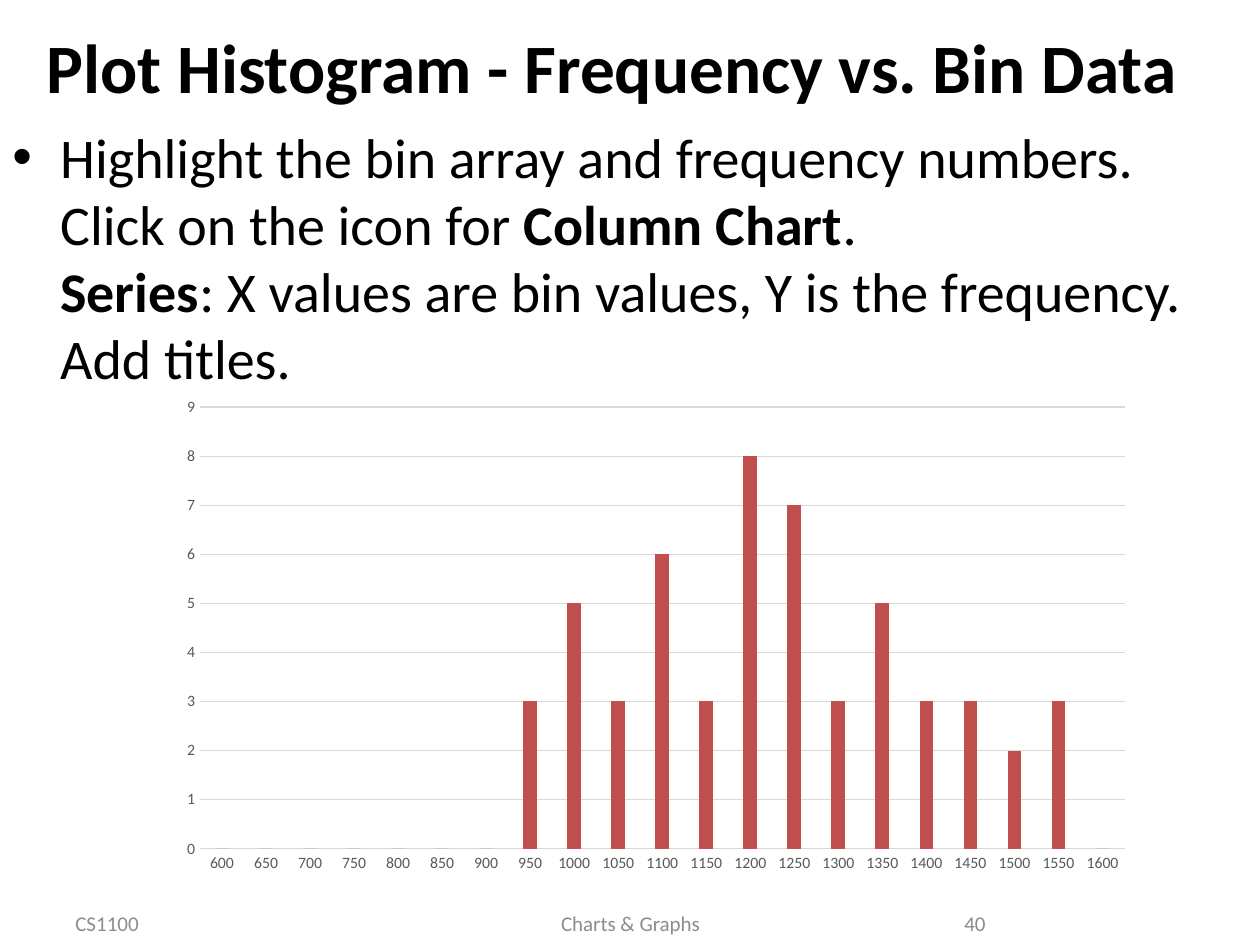
"""Build the histogram slide with its instructions, column chart and footer."""
from lxml.etree import SubElement
from pptx import Presentation
from pptx.chart.data import CategoryChartData
from pptx.dml.color import RGBColor
from pptx.enum.chart import XL_CHART_TYPE as ChartType, XL_TICK_MARK as TickMark
from pptx.enum.text import MSO_ANCHOR as Anchor, PP_ALIGN as Align
from pptx.oxml.ns import qn
from pptx.util import Inches, Pt

BLACK = RGBColor(0x00, 0x00, 0x00)
WHITE = RGBColor(0xFF, 0xFF, 0xFF)
FOOTER_GRAY = RGBColor(0x8C, 0x8C, 0x8C)
LABEL_GRAY = RGBColor(0x59, 0x59, 0x59)
GRID_GRAY = RGBColor(0xD9, 0xD9, 0xD9)
BAR_RED = RGBColor(0xC0, 0x50, 0x4D)
FONT = "Calibri"

TITLE = "Plot Histogram - Frequency vs. Bin Data "
INSTRUCTIONS = [
    [("Highlight the bin array and frequency numbers. Click on the icon for ", False),
     ("Column Chart", True), (". ", False)],
    [("Series", True), (": X values are bin values, Y is the frequency.", False)],
    [("Add titles.", False)],
]
FOOTERS = [
    ("CS1100", 0.5, 2.33, Align.LEFT),
    ("Charts & Graphs", 3.42, 3.17, Align.CENTER),
    ("40", 7.17, 0.75, Align.RIGHT),
]
BINS = [str(value) for value in range(600, 1601, 50)]
FREQUENCIES = [0] * 7 + [3, 5, 3, 6, 3, 8, 7, 3, 5, 3, 3, 2, 3, 0]

TITLE_FONT = {"name": FONT, "size": Pt(39.6), "bold": True}
BODY_FONT = {"name": FONT, "size": Pt(32)}
FOOTER_FONT = {"name": FONT, "size": Pt(12)}
CHART_FONT = {"name": FONT, "size": Pt(10)}
AXIS_FONT = {"name": FONT, "size": Pt(9)}


def set_font(font, values, color):
    for name, value in values.items():
        setattr(font, name, value)
    font.color.rgb = color


def add_text(slide, place, lines, values, color, align=Align.LEFT, anchor=Anchor.MIDDLE, bullet=False):
    frame = slide.shapes.add_textbox(*map(Inches, place)).text_frame
    frame.word_wrap = True
    frame.vertical_anchor = anchor
    paragraph = frame.paragraphs[0]
    paragraph.alignment = align
    if bullet:
        properties = paragraph._p.get_or_add_pPr()
        properties.set("marL", str(Inches(0.38)))
        properties.set("indent", str(-Inches(0.38)))
        SubElement(properties, qn("a:buFont"), typeface="Arial")
        SubElement(properties, qn("a:buChar"), char="•")
    for index, line in enumerate(lines):
        if index:
            paragraph.add_line_break()
        for text, bold in line:
            run = paragraph.add_run()
            run.text = text
            set_font(run.font, {**values, "bold": bold}, color)


def add_histogram(slide):
    data = CategoryChartData()
    data.categories = BINS
    data.add_series("Series 1", FREQUENCIES)
    place = map(Inches, (1.33, 3.08, 7.75, 3.92))
    chart = slide.shapes.add_chart(ChartType.COLUMN_CLUSTERED, *place, data).chart
    chart.has_legend = chart.has_title = False
    set_font(chart.font, CHART_FONT, BLACK)

    plot = chart.plots[0]
    for name, value in {"gap_width": 219, "overlap": -27, "vary_by_categories": False}.items():
        setattr(plot, name, value)
    fill = plot.series[0].format.fill
    fill.solid()
    fill.fore_color.rgb = BAR_RED

    category_axis, value_axis = chart.category_axis, chart.value_axis
    for axis in (category_axis, value_axis):
        axis.major_tick_mark = axis.minor_tick_mark = TickMark.NONE
        set_font(axis.tick_labels.font, AXIS_FONT, LABEL_GRAY)
    for name, value in {"minimum_scale": 0, "maximum_scale": 9, "major_unit": 1}.items():
        setattr(value_axis, name, value)
    value_axis.format.line.fill.background()
    for line in (category_axis.format.line, value_axis.major_gridlines.format.line):
        line.color.rgb = GRID_GRAY
        line.width = Pt(0.75)


def main():
    presentation = Presentation()
    presentation.slide_width, presentation.slide_height = Inches(10), Inches(7.5)
    slide = presentation.slides.add_slide(presentation.slide_layouts[6])
    slide.background.fill.solid()
    slide.background.fill.fore_color.rgb = WHITE

    add_text(slide, (0.17, 0.05, 9.5, 0.95), [[(TITLE, True)]], TITLE_FONT, BLACK, Align.CENTER)
    add_text(slide, (0, 0.92, 9.67, 2.5), INSTRUCTIONS, BODY_FONT, BLACK,
             anchor=Anchor.TOP, bullet=True)
    for text, left, width, align in FOOTERS:
        add_text(slide, (left, 7.17, width, 0.31), [[(text, False)]], FOOTER_FONT, FOOTER_GRAY, align)
    add_histogram(slide)
    presentation.save("out.pptx")


if __name__ == "__main__":
    main()
